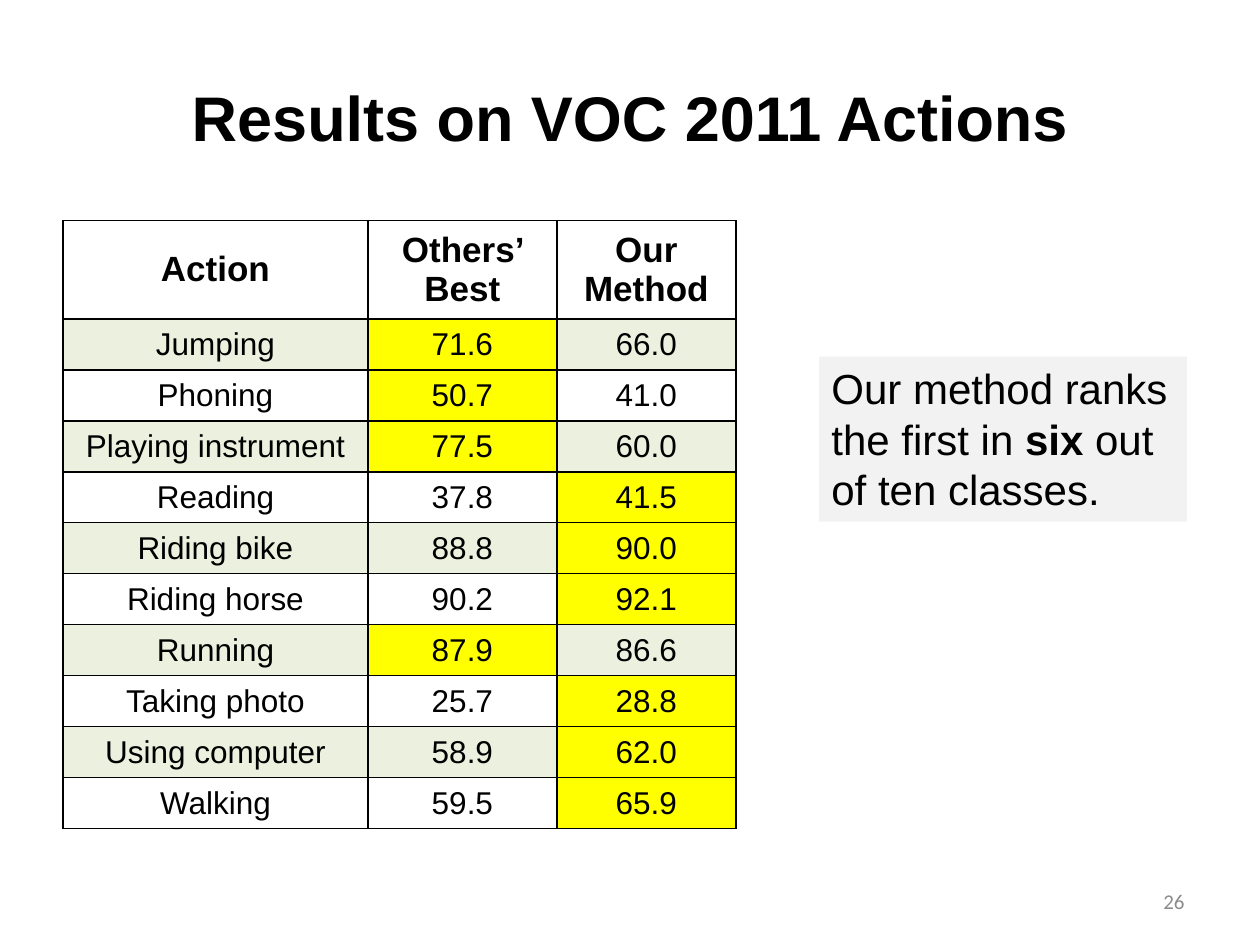
from dataclasses import dataclass

from lxml.etree import SubElement
from pptx import Presentation
from pptx.dml.color import RGBColor as Rgb
from pptx.enum.shapes import MSO_SHAPE as Preset
from pptx.enum.text import MSO_ANCHOR as Anchor, PP_ALIGN as Align
from pptx.oxml.ns import qn
from pptx.util import Inches, Pt


@dataclass(frozen=True)
class Theme:
    font: str = "Arial"
    number_font: str = "Calibri"
    ink: str = "000000"
    muted: str = "8C8C8C"
    band: str = "EBF1DE"
    winner: str = "FFFF00"
    note_fill: str = "F2F2F2"
    title_size: int = 36
    note_size: int = 24
    header_size: int = 20
    body_size: int = 18
    number_size: int = 12
    border_width: int = 1


THEME = Theme()
HEADERS = ("Action", "Others’ Best", "Our Method")
RESULTS = (
    ("Jumping", 71.6, 66.0),
    ("Phoning", 50.7, 41.0),
    ("Playing instrument", 77.5, 60.0),
    ("Reading", 37.8, 41.5),
    ("Riding bike", 88.8, 90.0),
    ("Riding horse", 90.2, 92.1),
    ("Running", 87.9, 86.6),
    ("Taking photo", 25.7, 28.8),
    ("Using computer", 58.9, 62.0),
    ("Walking", 59.5, 65.9),
)
COLUMN_WIDTHS = (2.42, 1.5, 1.42)
HEADER_HEIGHT = 0.78
TABLE_HEIGHT = 4.83


def write(paragraph, text, size, bold=False, color=THEME.ink, font=THEME.font):
    run = paragraph.add_run()
    run.text = text
    run.font.name = font
    run.font.size = Pt(size)
    run.font.bold = bold
    run.font.color.rgb = Rgb.from_string(color)


def add_label(slide, box, text, align, size, **style):
    frame = slide.shapes.add_textbox(*map(Inches, box)).text_frame
    frame.word_wrap = True
    frame.vertical_anchor = Anchor.MIDDLE
    paragraph = frame.paragraphs[0]
    paragraph.alignment = align
    write(paragraph, text, size, **style)


def draw_borders(cell):
    properties = cell._tc.get_or_add_tcPr()
    for position, side in enumerate(("a:lnL", "a:lnR", "a:lnT", "a:lnB")):
        border = SubElement(properties, qn(side), w=str(Pt(THEME.border_width)))
        properties.insert(position, border)
        stroke = SubElement(border, qn("a:solidFill"))
        SubElement(stroke, qn("a:srgbClr"), val=THEME.ink)


def fill_cell(cell, text, size, bold=False, color=None):
    cell.vertical_anchor = Anchor.MIDDLE
    paragraph = cell.text_frame.paragraphs[0]
    paragraph.alignment = Align.CENTER
    write(paragraph, text, size, bold)
    if color:
        cell.fill.solid()
        cell.fill.fore_color.rgb = Rgb.from_string(color)
    else:
        cell.fill.background()
    draw_borders(cell)


def add_results(slide):
    box = (0.5, 1.75, sum(COLUMN_WIDTHS), TABLE_HEIGHT)
    table = slide.shapes.add_table(
        len(RESULTS) + 1, len(HEADERS), *map(Inches, box)
    ).table
    for column, width in zip(table.columns, COLUMN_WIDTHS):
        column.width = Inches(width)
    for row in table.rows:
        row.height = Inches((TABLE_HEIGHT - HEADER_HEIGHT) / len(RESULTS))
    table.rows[0].height = Inches(HEADER_HEIGHT)

    for column, header in enumerate(HEADERS):
        fill_cell(table.cell(0, column), header, THEME.header_size, bold=True)
    for row, (action, *scores) in enumerate(RESULTS, start=1):
        band = THEME.band if row % 2 else None
        fill_cell(table.cell(row, 0), action, THEME.body_size, color=band)
        for column, score in enumerate(scores, start=1):
            color = THEME.winner if score == max(scores) else band
            fill_cell(table.cell(row, column), f"{score:.1f}", THEME.body_size, color=color)


def add_note(slide, box, phrases):
    note = slide.shapes.add_shape(Preset.RECTANGLE, *map(Inches, box))
    note.shadow.inherit = False
    note.fill.solid()
    note.fill.fore_color.rgb = Rgb.from_string(THEME.note_fill)
    note.line.fill.background()
    frame = note.text_frame
    frame.word_wrap = True
    frame.vertical_anchor = Anchor.TOP
    paragraph = frame.paragraphs[0]
    paragraph.alignment = Align.LEFT
    for text, bold in phrases:
        write(paragraph, text, THEME.note_size, bold)


def main():
    deck = Presentation()
    deck.slide_width, deck.slide_height = Inches(10), Inches(7.5)
    slide = deck.slides.add_slide(deck.slide_layouts[6])
    add_label(slide, (0.5, 0.3, 9, 1.25), "Results on VOC 2011 Actions",
              Align.CENTER, THEME.title_size, bold=True)
    add_label(slide, (7.17, 6.95, 2.33, 0.4), "26", Align.RIGHT,
              THEME.number_size, color=THEME.muted, font=THEME.number_font)
    add_results(slide)
    add_note(slide, (6.5, 2.83, 2.92, 1.31), (
        ("Our method ranks the first in ", False),
        ("six", True),
        (" out of ten classes.", False),
    ))
    deck.save("out.pptx")


if __name__ == "__main__":
    main()
